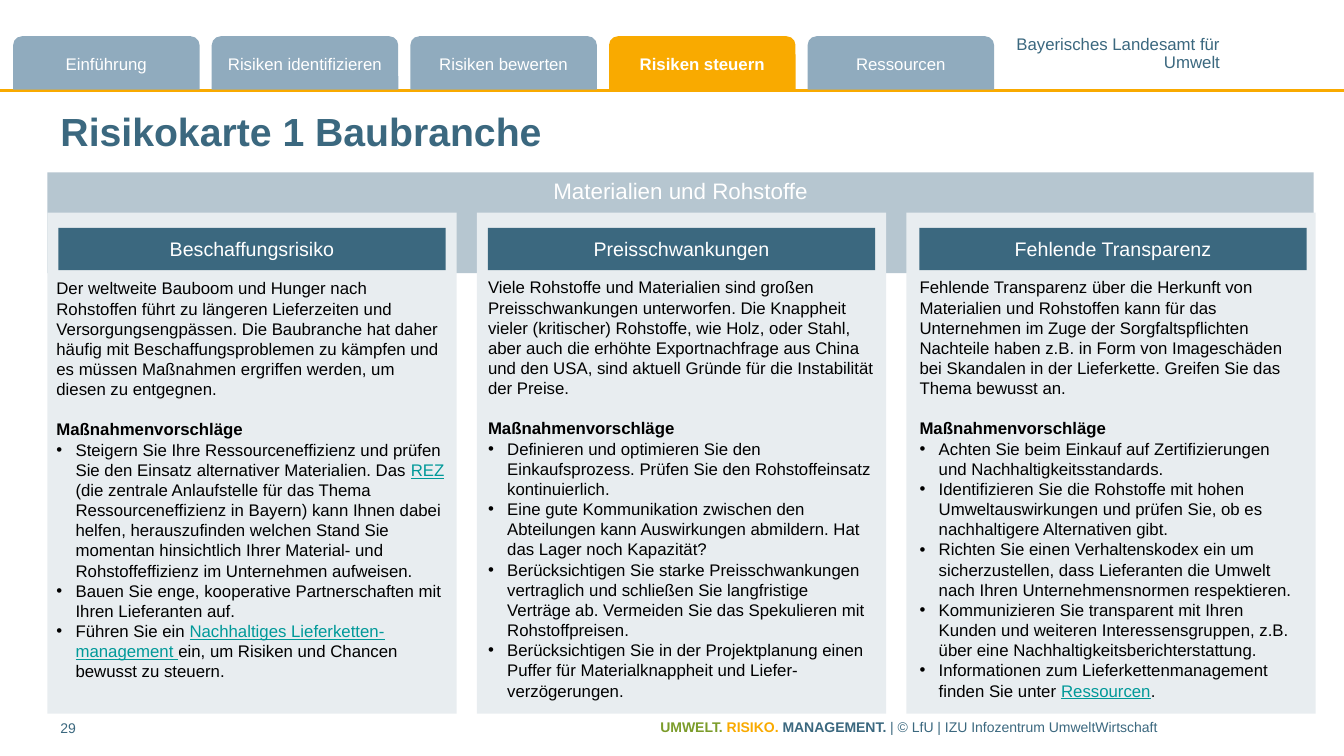
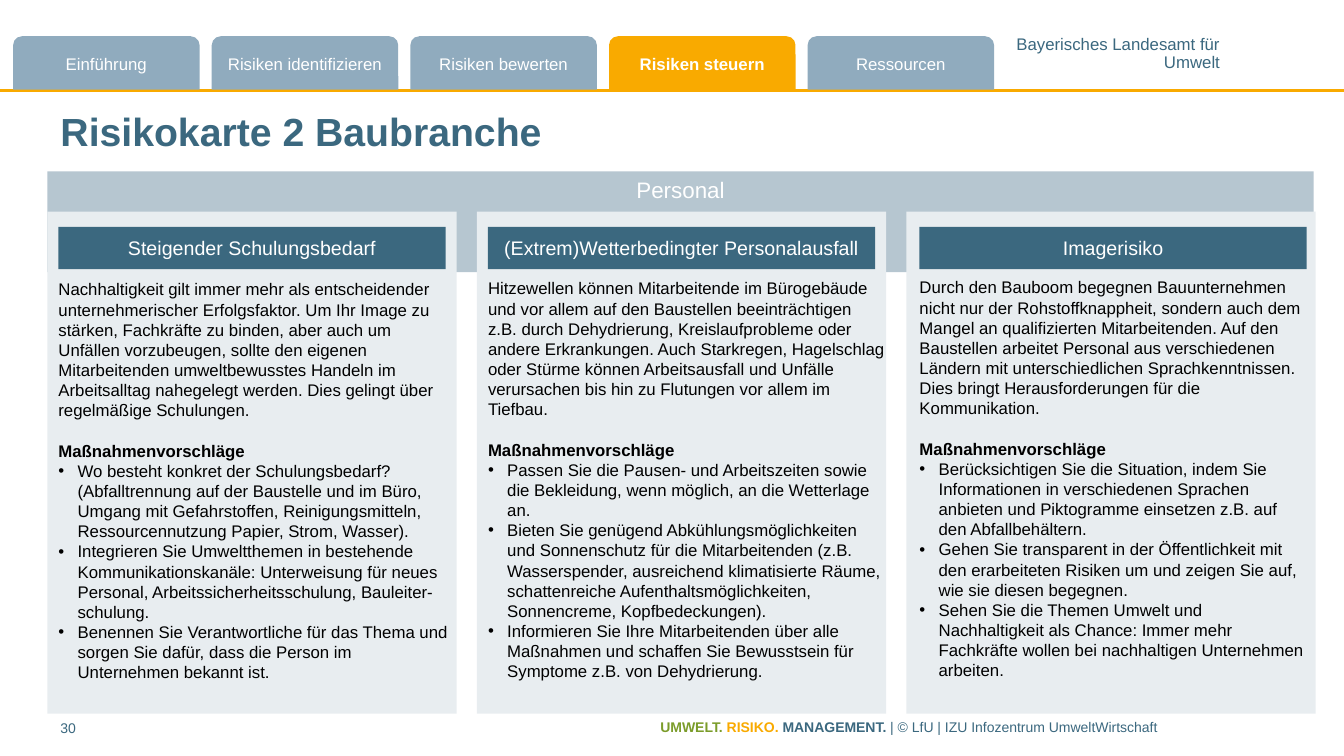
from dataclasses import dataclass

from lxml import etree
from pptx import Presentation
from pptx.dml.color import RGBColor
from pptx.enum.shapes import MSO_CONNECTOR, MSO_SHAPE
from pptx.enum.text import MSO_ANCHOR, MSO_AUTO_SIZE, PP_ALIGN
from pptx.oxml.ns import qn
from pptx.util import Inches, Pt

RECT, TAB = MSO_SHAPE.RECTANGLE, MSO_SHAPE.ROUND_2_SAME_RECTANGLE
LEFT, CENTER, RIGHT = PP_ALIGN.LEFT, PP_ALIGN.CENTER, PP_ALIGN.RIGHT
TOP, MIDDLE = MSO_ANCHOR.TOP, MSO_ANCHOR.MIDDLE


@dataclass(frozen=True)
class Theme:
    font: str = "Arial"
    blue: str = "3B687F"
    tab: str = "90ABBE"
    band: str = "B6C6D0"
    panel: str = "E8EDF0"
    orange: str = "F9AA00"
    green: str = "7B9C2A"
    link: str = "009999"
    black: str = "000000"
    white: str = "FFFFFF"
    title_size: int = 28
    band_size: int = 16
    head_size: int = 14
    body_size: int = 12
    foot_size: int = 10


T = Theme()
TABS = ["Einführung", "Risiken identifizieren", "Risiken bewerten",
        "Risiken steuern", "Ressourcen"]
ACTIVE_TAB = "Risiken steuern"
FOOTER = [("UMWELT. ", T.green, True), ("RISIKO. ", T.orange, True),
          ("MANAGEMENT. ", T.blue, True),
          ("| © LfU | IZU Infozentrum UmweltWirtschaft", T.blue, False)]
MEASURES = "Maßnahmenvorschläge"
HEAD_LEFTS = [0.58, 4.84, 9.12]
PANEL_LEFT, PANEL_STEP, PANEL_WIDTH, PANEL_BOTTOM = 0.47, 4.26, 4.06, 7.08

# Each column: heading, text box (left, top, width), introduction, measures.
# Text between bars is set as a link.
CARDS = [
    ("Risikokarte 1 Baubranche", "29", 1.71, "Materialien und Rohstoffe", [
        ("Beschaffungsrisiko", (0.56, 2.71, 3.87),
         ["Der weltweite Bauboom und Hunger nach Rohstoffen führt zu längeren Lieferzeiten und "
          "Versorgungsengpässen. Die Baubranche hat daher häufig mit Beschaffungsproblemen zu "
          "kämpfen und es müssen Maßnahmen ergriffen werden, um diesen zu entgegnen."],
         ["Steigern Sie Ihre Ressourceneffizienz und prüfen Sie den Einsatz alternativer "
          "Materialien. Das |REZ| (die zentrale Anlaufstelle für das Thema Ressourceneffizienz "
          "in Bayern) kann Ihnen dabei helfen, herauszufinden welchen Stand Sie momentan "
          "hinsichtlich Ihrer Material- und Rohstoffeffizienz im Unternehmen aufweisen.",
          "Bauen Sie enge, kooperative Partnerschaften mit Ihren Lieferanten auf.",
          "Führen Sie ein |Nachhaltiges Lieferketten-management |ein, um Risiken und Chancen "
          "bewusst zu steuern."]),
        ("Preisschwankungen", (4.84, 2.7, 3.85),
         ["Viele Rohstoffe und Materialien sind großen Preisschwankungen unterworfen. Die "
          "Knappheit vieler (kritischer) Rohstoffe, wie Holz, oder Stahl, aber auch die erhöhte "
          "Exportnachfrage aus China und den USA, sind aktuell Gründe für die Instabilität der "
          "Preise."],
         ["Definieren und optimieren Sie den Einkaufsprozess. Prüfen Sie den Rohstoffeinsatz "
          "kontinuierlich.",
          "Eine gute Kommunikation zwischen den Abteilungen kann Auswirkungen abmildern. Hat "
          "das Lager noch Kapazität?",
          "Berücksichtigen Sie starke Preisschwankungen vertraglich und schließen Sie "
          "langfristige Verträge ab. Vermeiden Sie das Spekulieren mit Rohstoffpreisen.",
          "Berücksichtigen Sie in der Projektplanung einen Puffer für Materialknappheit und "
          "Liefer-verzögerungen."]),
        ("Fehlende Transparenz", (9.12, 2.7, 3.78),
         ["Fehlende Transparenz über die Herkunft von Materialien und Rohstoffen kann für das "
          "Unternehmen im Zuge der Sorgfaltspflichten Nachteile haben z.B. in Form von "
          "Imageschäden bei Skandalen in der Lieferkette. Greifen Sie das Thema bewusst an."],
         ["Achten Sie beim Einkauf auf Zertifizierungen und Nachhaltigkeitsstandards.",
          "Identifizieren Sie die Rohstoffe mit hohen Umweltauswirkungen und prüfen Sie, ob es "
          "nachhaltigere Alternativen gibt.",
          "Richten Sie einen Verhaltenskodex ein um sicherzustellen, dass Lieferanten die "
          "Umwelt nach Ihren Unternehmensnormen respektieren.",
          "Kommunizieren Sie transparent mit Ihren Kunden und weiteren Interessensgruppen, z.B. "
          "über eine Nachhaltigkeitsberichterstattung.",
          "Informationen zum Lieferkettenmanagement finden Sie unter |Ressourcen|."]),
    ]),
    ("Risikokarte 2 Baubranche", "30", 1.7, "Personal", [
        ("Steigender Schulungsbedarf", (0.58, 2.72, 3.96),
         ["Nachhaltigkeit gilt immer mehr als entscheidender unternehmerischer Erfolgsfaktor. Um "
          "Ihr Image zu stärken, Fachkräfte zu binden, aber auch um Unfällen vorzubeugen, sollte "
          "den eigenen Mitarbeitenden umweltbewusstes Handeln im Arbeitsalltag nahegelegt "
          "werden. Dies gelingt über regelmäßige Schulungen."],
         ["Wo besteht konkret der Schulungsbedarf? (Abfalltrennung auf der Baustelle und im "
          "Büro, Umgang mit Gefahrstoffen, Reinigungsmitteln, Ressourcennutzung Papier, Strom, "
          "Wasser).",
          "Integrieren Sie Umweltthemen in bestehende Kommunikationskanäle: Unterweisung für "
          "neues Personal, Arbeitssicherheitsschulung, Bauleiter-schulung.",
          "Benennen Sie Verantwortliche für das Thema und sorgen Sie dafür, dass die Person im "
          "Unternehmen bekannt ist."]),
        ("(Extrem)Wetterbedingter Personalausfall", (4.84, 2.71, 3.95),
         ["Hitzewellen können Mitarbeitende im Bürogebäude und vor allem auf den Baustellen "
          "beeinträchtigen",
          "z.B. durch Dehydrierung, Kreislaufprobleme oder andere Erkrankungen. Auch Starkregen, "
          "Hagelschlag oder Stürme können Arbeitsausfall und Unfälle verursachen bis hin zu "
          "Flutungen vor allem im Tiefbau."],
         ["Passen Sie die Pausen- und Arbeitszeiten sowie die Bekleidung, wenn möglich, an die "
          "Wetterlage an.",
          "Bieten Sie genügend Abkühlungsmöglichkeiten und Sonnenschutz für die Mitarbeitenden "
          "(z.B. Wasserspender, ausreichend klimatisierte Räume, schattenreiche "
          "Aufenthaltsmöglichkeiten, Sonnencreme, Kopfbedeckungen).",
          "Informieren Sie Ihre Mitarbeitenden über alle Maßnahmen und schaffen Sie Bewusstsein "
          "für Symptome z.B. von Dehydrierung."]),
        ("Imagerisiko", (9.12, 2.7, 3.84),
         ["Durch den Bauboom begegnen Bauunternehmen nicht nur der Rohstoffknappheit, sondern "
          "auch dem Mangel an qualifizierten Mitarbeitenden. Auf den Baustellen arbeitet "
          "Personal aus verschiedenen Ländern mit unterschiedlichen Sprachkenntnissen. Dies "
          "bringt Herausforderungen für die Kommunikation."],
         ["Berücksichtigen Sie die Situation, indem Sie Informationen in verschiedenen Sprachen "
          "anbieten und Piktogramme einsetzen z.B. auf den Abfallbehältern.",
          "Gehen Sie transparent in der Öffentlichkeit mit den erarbeiteten Risiken um und "
          "zeigen Sie auf, wie sie diesen begegnen.",
          "Sehen Sie die Themen Umwelt und Nachhaltigkeit als Chance: Immer mehr Fachkräfte "
          "wollen bei nachhaltigen Unternehmen arbeiten."]),
    ]),
]


def add_run(p, text, size, color, bold=False, underline=False):
    r = p.add_run()
    r.text = text
    r.font.name, r.font.size = T.font, Pt(size)
    r.font.color.rgb = RGBColor.from_string(color)
    r.font.bold, r.font.underline = bold, underline


def add_box(s, box, fill=None, kind=RECT, anchor=TOP, align=LEFT):
    """Add a filled shape, or a text box if there is no fill; return the shape."""
    box = [Inches(v) for v in box]
    if fill:
        sp = s.shapes.add_shape(kind, *box)
        sp.shadow.inherit = False
        sp.fill.solid()
        sp.fill.fore_color.rgb = RGBColor.from_string(fill)
        sp.line.fill.background()
    else:
        sp = s.shapes.add_textbox(*box)
    tf = sp.text_frame
    tf.word_wrap = True
    tf.margin_left = tf.margin_right = 0
    tf.vertical_anchor = anchor
    tf.paragraphs[0].alignment = align
    return sp


prs = Presentation()
prs.slide_width, prs.slide_height = Inches(13.33), Inches(7.5)
layout = prs.slide_layouts.get_by_name("Title Only")
for ph in list(layout.placeholders)[1:]:
    ph.element.getparent().remove(ph.element)

title = layout.placeholders[0]
title.left, title.top = Inches(0.6), Inches(1.02)
title.width, title.height = Inches(12.31), Inches(0.55)
title.text_frame.margin_left = title.text_frame.margin_right = 0
title.text_frame.vertical_anchor = MIDDLE
title.text_frame.auto_size = MSO_AUTO_SIZE.NONE

# Shared frame: drawn on the first slide, then moved to the layout
slides = [prs.slides.add_slide(layout) for _ in CARDS]
s = slides[0]
rule = s.shapes.add_connector(MSO_CONNECTOR.STRAIGHT, 0, Inches(0.9),
                              prs.slide_width, Inches(0.9))
rule.line.color.rgb = RGBColor.from_string(T.orange)
rule.line.width = Pt(2)
etree.SubElement(rule.element.spPr, qn("a:effectLst"))
frame = [rule]

agency = add_box(s, (9.97, 0.37, 2.13, 0.34))
tf = agency.text_frame
tf.margin_top = tf.margin_bottom = 0
for i, text in enumerate(["Bayerisches Landesamt für", "Umwelt"]):
    p = tf.add_paragraph() if i else tf.paragraphs[0]
    p.alignment, p.line_spacing = RIGHT, 0.85
    add_run(p, text, T.body_size, T.blue)
frame.append(agency)

for i, text in enumerate(TABS):
    active = text == ACTIVE_TAB
    sp = add_box(s, (0.13 + 1.97 * i, 0.36, 1.85, 0.53), T.orange if active else T.tab,
                 TAB, MIDDLE, CENTER)
    add_run(sp.text_frame.paragraphs[0], text, T.body_size, T.white, active)
    frame.append(sp)

footer = add_box(s, (6.55, 7.08, 6.36, 0.31))
for text, color, bold in FOOTER:
    add_run(footer.text_frame.paragraphs[0], text, T.foot_size, color, bold)
frame.append(footer)
for sp in frame:
    layout.shapes.element.append(sp.element)

for s, (heading, number, top, theme, columns) in zip(slides, CARDS):
    p = s.shapes.title.text_frame.paragraphs[0]
    p.alignment = LEFT
    add_run(p, heading, T.title_size, T.blue, True)
    sp = add_box(s, (0.6, 7.09, 0.7, 0.31))
    add_run(sp.text_frame.paragraphs[0], number, T.foot_size, T.blue)

    band = add_box(s, (0.47, top, 12.56, 1), T.band, align=CENTER)
    add_run(band.text_frame.paragraphs[0], theme, T.band_size, T.white)

    for i, (risk, (left, text_top, width), intro, measures) in enumerate(columns):
        panel_top = top + 0.4
        add_box(s, (PANEL_LEFT + PANEL_STEP * i, panel_top, PANEL_WIDTH,
                    PANEL_BOTTOM - panel_top), T.panel)
        head = add_box(s, (HEAD_LEFTS[i], top + 0.55, 3.84, 0.42), T.blue,
                       anchor=MIDDLE, align=CENTER)
        add_run(head.text_frame.paragraphs[0], risk, T.head_size, T.white)

        tf = add_box(s, (left, text_top, width, 4.34)).text_frame
        for j, text in enumerate(intro):
            p = tf.add_paragraph() if j else tf.paragraphs[0]
            add_run(p, text, T.body_size, T.black)
        p = tf.add_paragraph()
        p.space_before = Pt(14.4)
        add_run(p, MEASURES, T.body_size, T.black, True)
        for text in measures:
            p = tf.add_paragraph()
            pPr = p._p.get_or_add_pPr()
            pPr.set("marL", str(Inches(0.19)))
            pPr.set("indent", str(-Inches(0.19)))
            etree.SubElement(pPr, qn("a:buFont")).set("typeface", T.font)
            etree.SubElement(pPr, qn("a:buChar")).set("char", "•")
            for k, part in enumerate(text.split("|")):
                is_link = k % 2 == 1
                add_run(p, part, T.body_size, T.link if is_link else T.black,
                        underline=is_link)

prs.save("out.pptx")
